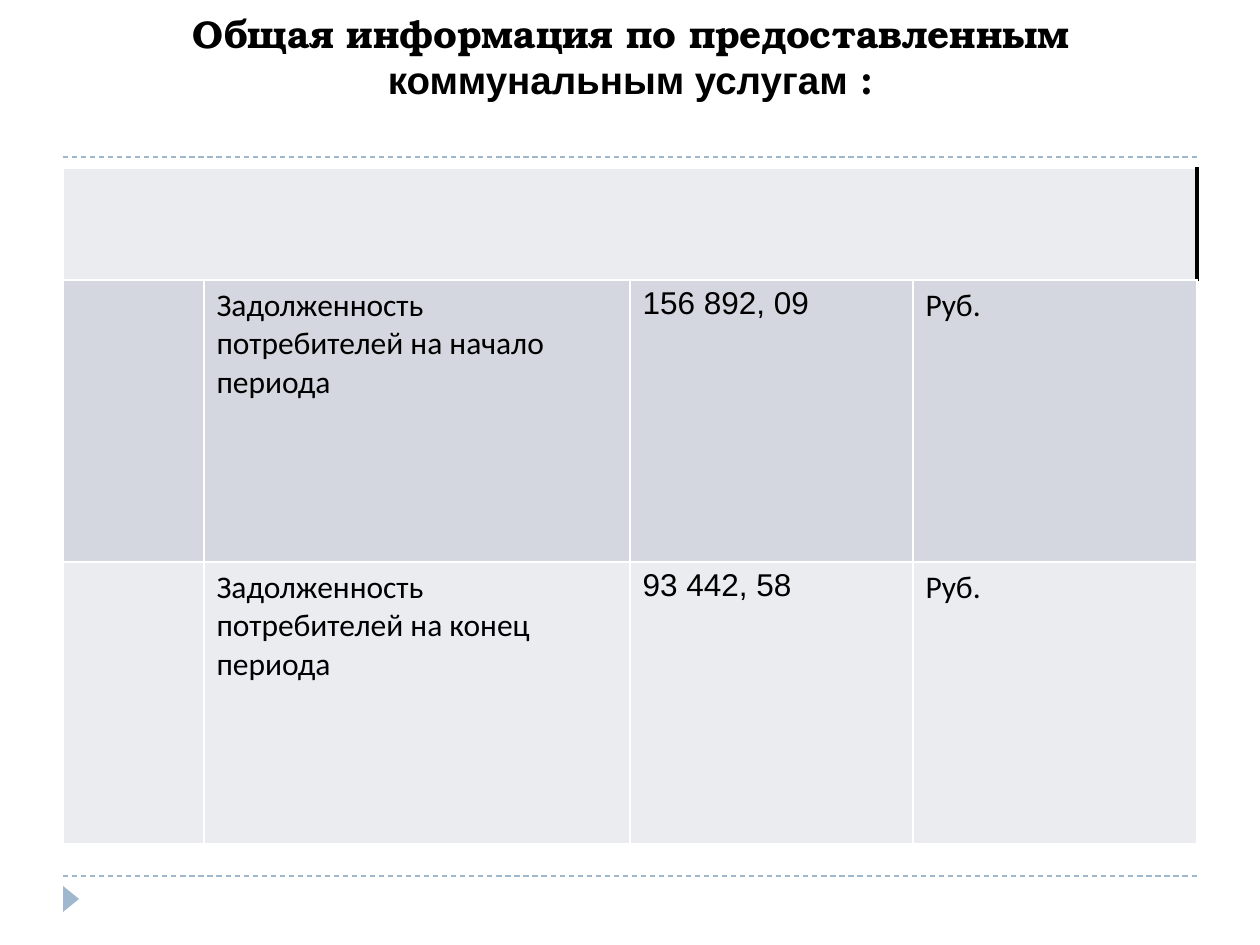
import pptx
import pptx.util
import pptx.dml.color
import pptx.enum.dml
import pptx.enum.shapes
import pptx.enum.text
import pptx.oxml
import pptx.oxml.ns

TITLE = [
    ("Общая информация по предоставленным", "serif"),
    (" коммунальным услугам", "sans"),
    (" :", "serif"),
]
ROWS = [
    ["", "", "", ""],
    ["", "Задолженность потребителей на начало периода", "156 892, 09", "Руб."],
    ["", "Задолженность потребителей на конец периода", "93 442, 58", "Руб."],
]
COLUMN_FONTS = ["body", "body", "sans", "body"]
COLUMN_WIDTHS = [141, 426, 283, 284]
ROW_HEIGHTS = [112, 282, 282]
LEFT, WIDTH = 63, 1134
RULES_Y = [157, 876]

THEME = {
    "serif": "TeX Gyre Bonum", "sans": "Arial", "body": "Calibri",
    "title_size": 22, "body_size": 18,
    "text": "000000", "accent": "9FB8CD", "border": "FFFFFF",
    "bands": ["EBECF0", "D5D7E0"],
}


def px(n):
    return pptx.util.Emu(round(n * 914400 / 126))


def rgb(name):
    return pptx.dml.color.RGBColor.from_string(THEME[name])


def style(r, font, size, bold=False):
    r.font.name = THEME[font]
    r.font.size = pptx.util.Pt(THEME[size])
    r.font.bold = bold
    r.font.color.rgb = rgb("text")


def set_border(cell, side, color, points):
    cell._tc.get_or_add_tcPr().append(pptx.oxml.parse_xml(
        f'<a:ln{side} {pptx.oxml.ns.nsdecls("a")} w="{int(points * 12700)}">'
        f'<a:solidFill><a:srgbClr val="{color}"/></a:solidFill></a:ln{side}>'))


def add_rule(s, y):
    line = s.shapes.add_connector(
        pptx.enum.shapes.MSO_CONNECTOR.STRAIGHT, px(LEFT), px(y), px(LEFT + WIDTH), px(y))
    line.line.color.rgb = rgb("accent")
    line.line.width = pptx.util.Pt(0.75)
    line.line.dash_style = pptx.enum.dml.MSO_LINE.DASH
    line._element.spPr.append(
        pptx.oxml.parse_xml(f'<a:effectLst {pptx.oxml.ns.nsdecls("a")}/>'))


def add_marker(s):
    sp = s.shapes.add_shape(
        pptx.enum.shapes.MSO_SHAPE.ISOSCELES_TRIANGLE, px(58), px(891), px(26), px(16))
    sp.rotation = 90
    sp.shadow.inherit = False
    sp.fill.solid()
    sp.fill.fore_color.rgb = rgb("accent")
    sp.line.fill.background()


def add_title(s):
    sp = s.shapes.title
    sp.left, sp.top, sp.width, sp.height = px(64), px(16), px(WIDTH), px(136)
    tf = sp.text_frame
    tf.word_wrap = True
    tf.auto_size = pptx.enum.text.MSO_AUTO_SIZE.NONE
    tf.vertical_anchor = pptx.enum.text.MSO_ANCHOR.BOTTOM
    tf.margin_top, tf.margin_bottom = 0, px(50)
    p = tf.paragraphs[0]
    p.alignment = pptx.enum.text.PP_ALIGN.CENTER
    p.line_spacing = 1.0
    for text, font in TITLE:
        r = p.add_run()
        r.text = text
        style(r, font, "title_size", True)


def add_debt_table(s):
    table = s.shapes.add_table(
        len(ROWS), len(COLUMN_WIDTHS), px(LEFT), px(168),
        px(WIDTH), px(sum(ROW_HEIGHTS))).table
    for column, width in zip(table.columns, COLUMN_WIDTHS):
        column.width = px(width)
    for i, (values, height) in enumerate(zip(ROWS, ROW_HEIGHTS)):
        table.rows[i].height = px(height)
        for j, text in enumerate(values):
            cell = table.cell(i, j)
            for side in "LRTB":
                if i == 0 and side == "R":
                    set_border(cell, side, THEME["text"], 2.25)
                else:
                    set_border(cell, side, THEME["border"], 1)
            cell.fill.solid()
            cell.fill.fore_color.rgb = pptx.dml.color.RGBColor.from_string(
                THEME["bands"][i % 2])
            if text:
                p = cell.text_frame.paragraphs[0]
                p.text = text
                style(p.runs[0], COLUMN_FONTS[j], "body_size")
    table.cell(0, 0).merge(table.cell(0, len(COLUMN_WIDTHS) - 1))


def main():
    prs = pptx.Presentation()
    prs.slide_width, prs.slide_height = px(1260), px(945)
    s = prs.slides.add_slide(prs.slide_layouts[5])
    for y in RULES_Y:
        add_rule(s, y)
    add_marker(s)
    add_title(s)
    add_debt_table(s)
    prs.save("out.pptx")


if __name__ == "__main__":
    main()
